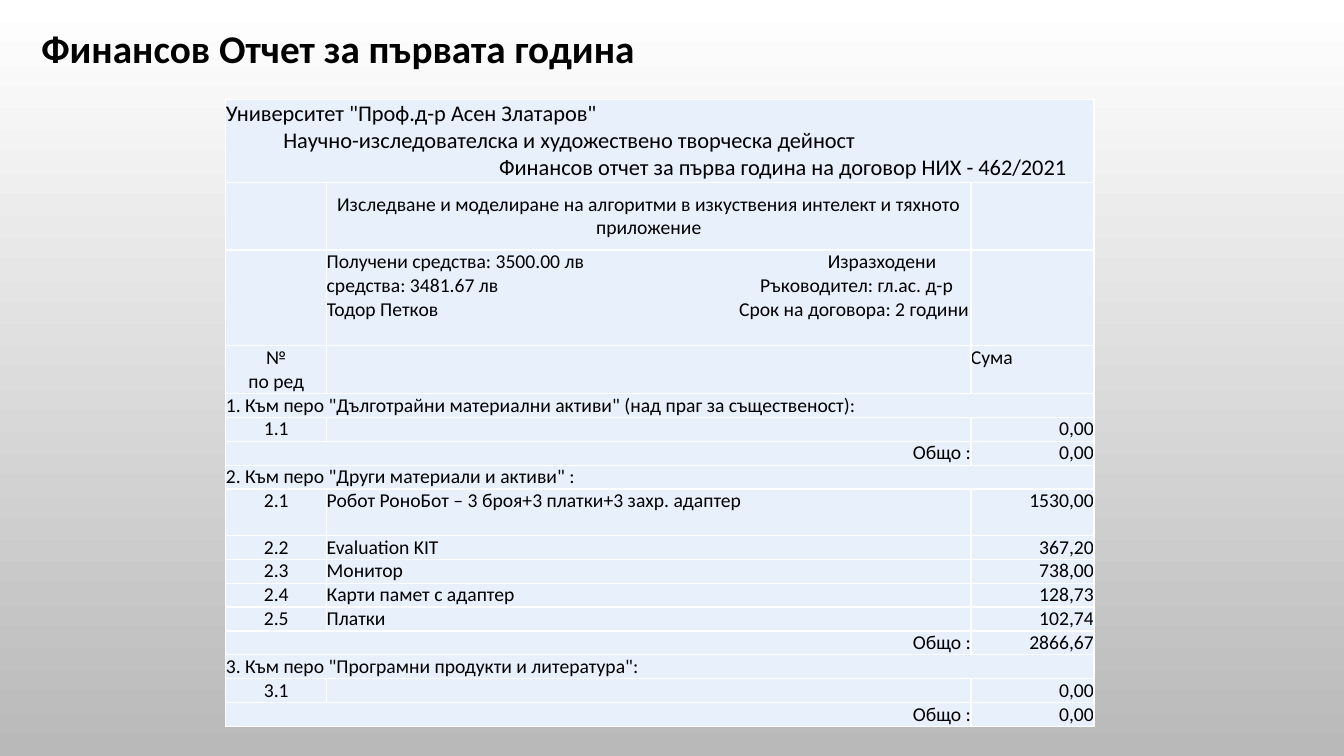
from lxml.etree import SubElement
from pptx import Presentation
from pptx.dml.color import RGBColor
from pptx.enum.text import MSO_ANCHOR, MSO_AUTO_SIZE, PP_ALIGN
from pptx.oxml.ns import qn
from pptx.util import Inches, Pt

FACE = "Calibri"
INK, PALE, WHITE, GREY = "000000", "E8F0FC", "FFFFFF", "B9B9B9"
LEFT, MID, RIGHT = PP_ALIGN.LEFT, PP_ALIGN.CENTER, PP_ALIGN.RIGHT
COLS = (1, 6.39, 1.22)
LINE = 0.235
SUM = "Общо :"

HEAD = (
    ('Университет "Проф.д-р Асен Златаров"', 0),
    ("Научно-изследователска и художествено творческа дейност", 0.57),
    ("Финансов отчет за първа година на договор НИХ - 462/2021", 2.71),
)
TOPIC = "Изследване и моделиране на алгоритми в изкуствения интелект и тяхното приложение"
FACTS = (
    ("Получени средства: 3500.00 лв\tИзразходени", 4.97),
    ("средства: 3481.67 лв\tРъководител: гл.ас. д-р", 4.3),
    ("Тодор Петков\tСрок на договора: 2 години", 4.09),
)
PARTS = (
    ('1. Към перо "Дълготрайни материални активи" (над праг за същественост):',
     (("1.1", "", "0,00"),), "0,00"),
    ('2. Към перо "Други материали и активи" :',
     (("2.1", "Робот РоноБот – 3 броя+3 платки+3 захр. адаптер", "1530,00"),
      ("2.2", "Evaluation KIT", "367,20"),
      ("2.3", "Монитор", "738,00"),
      ("2.4", "Карти памет с адаптер", "128,73"),
      ("2.5", "Платки", "102,74")), "2866,67"),
    ('3. Към перо "Програмни продукти и литература":',
     (("3.1", "", "0,00"),), "0,00"),
)


def tint(code):
    """Return the colour for a hex string."""
    return RGBColor.from_string(code)


def style(para, size, bold=False):
    """Format the runs of a paragraph."""
    for run in para.runs:
        run.font.name = FACE
        run.font.size = Pt(size)
        run.font.bold = bold
        run.font.color.rgb = tint(INK)


def border(cell):
    """Draw thin white lines around a cell."""
    props = cell._tc.get_or_add_tcPr()
    for spot, side in enumerate(("lnL", "lnR", "lnT", "lnB")):
        line = props.makeelement(qn("a:" + side), {"w": str(Pt(1))})
        fill = SubElement(line, qn("a:solidFill"))
        SubElement(fill, qn("a:srgbClr"), val=WHITE)
        props.insert(spot, line)


def blank(cell):
    """Give a cell its fill, lines and small empty text."""
    cell.margin_left = cell.margin_right = 0
    cell.margin_top = cell.margin_bottom = 0
    cell.fill.solid()
    cell.fill.fore_color.rgb = tint(PALE)
    border(cell)
    SubElement(cell.text_frame.paragraphs[0]._p, qn("a:endParaRPr"), sz="1400")


def write(cell, text, align=LEFT, size=14, anchor=MSO_ANCHOR.TOP):
    """Fill a cell with aligned text."""
    cell.text_frame.text = text
    cell.vertical_anchor = anchor
    for para in cell.text_frame.paragraphs:
        para.alignment = align
        style(para, size)


def stagger(cell, lines):
    """Indent each line of a cell by its own distance."""
    write(cell, "\n".join(text for text, gap in lines), size=16)
    for para, (text, gap) in zip(cell.text_frame.paragraphs, lines):
        para._p.get_or_add_pPr().set("marL", str(Inches(gap)))


def split(cell, lines):
    """Place the second half of each line at a tab stop."""
    write(cell, "\n".join(text for text, gap in lines))
    for para, (text, gap) in zip(cell.text_frame.paragraphs, lines):
        tabs = SubElement(para._p.get_or_add_pPr(), qn("a:tabLst"))
        SubElement(tabs, qn("a:tab"), pos=str(Inches(gap)), algn="l")


def top(grid):
    """Fill the four heading rows."""
    grid.cell(0, 0).merge(grid.cell(0, 2))
    stagger(grid.cell(0, 0), HEAD)
    write(grid.cell(1, 1), TOPIC, MID, anchor=MSO_ANCHOR.MIDDLE)
    split(grid.cell(2, 1), FACTS)
    write(grid.cell(3, 0), "№\vпо ред", MID)
    write(grid.cell(3, 2), "Сума")


def part(grid, row, name, items, total):
    """Fill one budget part and return the next free row."""
    grid.cell(row, 0).merge(grid.cell(row, 2))
    write(grid.cell(row, 0), name)
    for row, item in enumerate(items, row + 1):
        for col, (text, align) in enumerate(zip(item, (MID, LEFT, RIGHT))):
            if text:
                write(grid.cell(row, col), text, align)
    row += 1
    grid.cell(row, 0).merge(grid.cell(row, 1))
    write(grid.cell(row, 0), SUM, RIGHT)
    write(grid.cell(row, 2), total, RIGHT)
    return row + 1


def report(slide, left, upper):
    """Build the report table from its upper left corner."""
    highs = [0.82, 0.67, 0.95, 0.47] + [LINE] * 4 + [0.46] + [LINE] * 8
    frame = slide.shapes.add_table(
        len(highs), len(COLS), Inches(left), Inches(upper),
        Inches(sum(COLS)), Inches(sum(highs)))
    grid = frame.table
    grid.first_row = grid.horz_banding = False
    for col, wide in zip(grid.columns, COLS):
        col.width = Inches(wide)
    for row, high in zip(grid.rows, highs):
        row.height = Inches(high)
        for cell in row.cells:
            blank(cell)
    top(grid)
    row = 4
    for name, items, total in PARTS:
        row = part(grid, row, name, items, total)


def title(slide, left, upper, wide, high):
    """Place the slide title in its box."""
    shape = slide.shapes.title
    shape.left, shape.top = Inches(left), Inches(upper)
    shape.width, shape.height = Inches(wide), Inches(high)
    frame = shape.text_frame
    frame.text = "Финансов Отчет за първата година"
    frame.auto_size = MSO_AUTO_SIZE.NONE
    frame.word_wrap = True
    frame.vertical_anchor = MSO_ANCHOR.TOP
    frame.margin_left = Inches(0.18)
    frame.paragraphs[0].alignment = LEFT
    style(frame.paragraphs[0], 28, True)


def shade(slide):
    """Fade the background from white to grey."""
    fill = slide.background.fill
    fill.gradient()
    fill.gradient_angle = 270
    for stop, code in zip(fill.gradient_stops, (WHITE, GREY)):
        stop.color.rgb = tint(code)


def main():
    """Build and save the slide."""
    deck = Presentation()
    deck.slide_width, deck.slide_height = Inches(13.33), Inches(7.5)
    slide = deck.slides.add_slide(deck.slide_layouts[5])
    shade(slide)
    report(slide, 2.24, 0.99)
    title(slide, 0.23, 0.19, 9.35, 0.57)
    deck.save("out.pptx")


if __name__ == "__main__":
    main()
